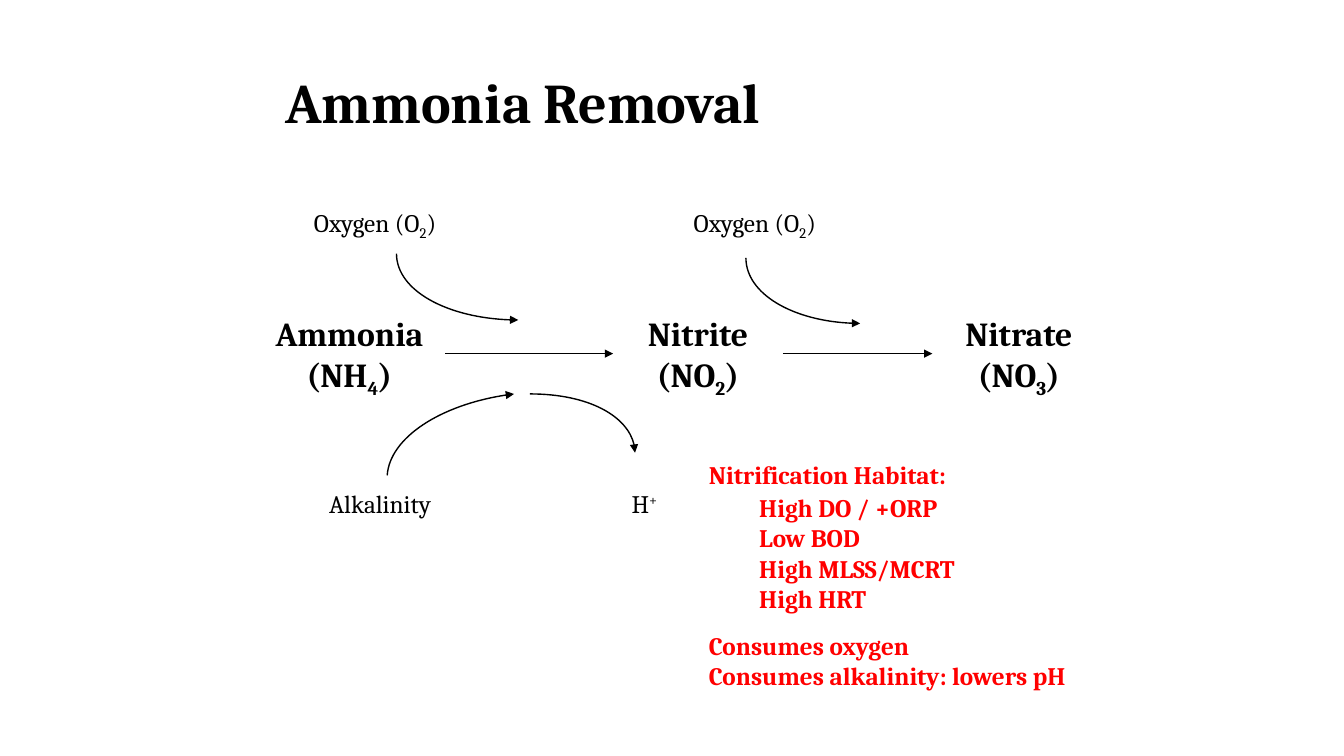
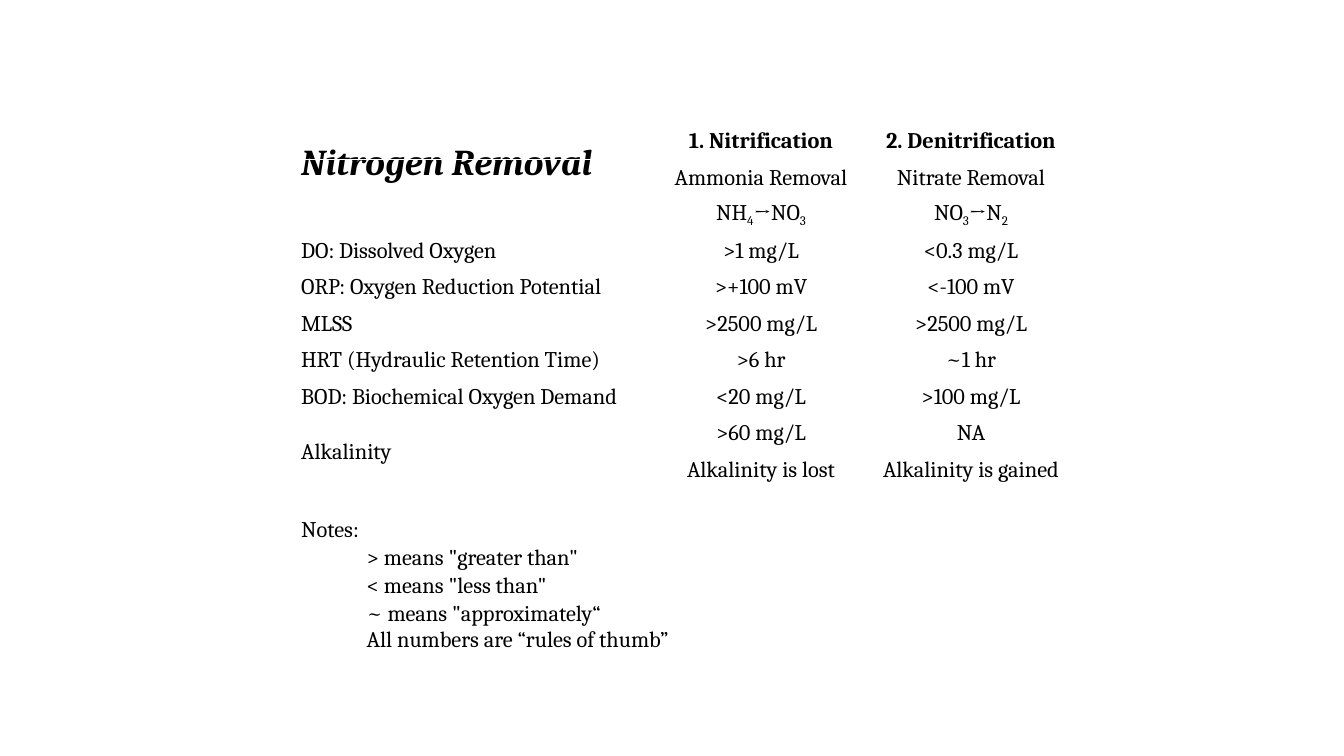
from dataclasses import dataclass, replace

from lxml import etree
from pptx import Presentation
from pptx.dml.color import RGBColor
from pptx.enum.shapes import MSO_CONNECTOR
from pptx.enum.text import MSO_ANCHOR, PP_ALIGN
from pptx.oxml.ns import qn
from pptx.util import Emu, Inches, Pt

STRAIGHT = MSO_CONNECTOR.STRAIGHT
TOP, MIDDLE = MSO_ANCHOR.TOP, MSO_ANCHOR.MIDDLE
LEFT, CENTER = PP_ALIGN.LEFT, PP_ALIGN.CENTER

HUES = {"ink": "000000", "alert": "FF0000", "edge": "FFFFFF"}
FONT = "Cambria"
COLS, ROWS = 160, 90
CELL = Inches(1) // 12
LEFT_SIDE, RIGHT_SIDE = 1, 3


@dataclass(frozen=True)
class Style:
    size: float
    bold: bool = False
    slant: bool = False
    hue: str = "ink"
    align: int = LEFT
    shift: int = -25


@dataclass(frozen=True)
class Line:
    text: str
    indent: float = 0
    before: float = 0
    after: float = 0


@dataclass(frozen=True)
class Label:
    left: float
    top: float
    width: float
    height: float
    lines: tuple[Line, ...]
    style: Style
    anchor: int = TOP


TITLE = Style(40, bold=True)
STAGE = Style(24, bold=True, align=CENTER)
NOTE = Style(18)
ION = replace(NOTE, shift=30)
ALERT = Style(18, bold=True, hue="alert")
HEADING = Style(26, bold=True, slant=True, align=CENTER)
ITEM = Style(16)
VALUE = replace(ITEM, align=CENTER)
HEAD = replace(VALUE, bold=True)

STAGES = [
    Label(30.2, 36.7, 22.8, 10.8, (Line("Ammonia (NH|4|)"),), STAGE),
    Label(73, 36.7, 20.2, 10.8, (Line("Nitrite (NO|2|)"),), STAGE),
    Label(111, 36.7, 20.6, 10.8, (Line("Nitrate (NO|3|)"),), STAGE),
]
HABITAT = (
    Line("Nitrification Habitat:", after=2),
    Line("High DO / +ORP", 6),
    Line("Low BOD", 6),
    Line("High MLSS/MCRT", 6),
    Line("High HRT", 6),
    Line("Consumes oxygen", before=12),
    Line("Consumes alkalinity: lowers pH"),
)
LABELS = [
    Label(32.8, 7, 104, 10, (Line("Ammonia Removal"),), TITLE, MIDDLE),
    Label(36.2, 24.1, 18, 4.7, (Line("Oxygen (O|2|)"),), NOTE),
    Label(81.4, 24.1, 19.6, 4.7, (Line("Oxygen (O|2|)"),), NOTE),
    Label(38, 57.5, 16.4, 4.7, (Line("Alkalinity"),), NOTE),
    Label(74, 57.5, 11.2, 4.7, (Line("H|+"),), ION),
    Label(83.2, 54.1, 56.9, 32.2, HABITAT, ALERT),
]
CURVES = [
    [(47.2, 30.2), (47.2, 34.6), (53.7, 38.1), (61.7, 38.1)],
    [(88.8, 30.7), (88.8, 35), (94.9, 38.5), (102.4, 38.5)],
    [(46.1, 56.6), (46.4, 52.1), (52.9, 47.9), (61.2, 46.9)],
    [(63.1, 46.9), (70.1, 46.9), (75.6, 50), (75.6, 53.9)],
]

WIDTHS = [43.2, 25, 25]
HEIGHTS = [4.35] * 10 + [3.2] * 4 + [6.4]
GRID = [
    ("", "1. Nitrification", "2. Denitrification"),
    ("", "Ammonia Removal", "Nitrate Removal"),
    ("", "NH|4|→NO|3", "NO|3|→N|2"),
    ("DO: Dissolved Oxygen", ">1 mg/L", "<0.3 mg/L"),
    ("ORP: Oxygen Reduction Potential", ">+100 mV", "<-100 mV"),
    ("MLSS", ">2500 mg/L", ">2500 mg/L"),
    ("HRT (Hydraulic Retention Time)", ">6 hr", "~1 hr"),
    ("BOD: Biochemical Oxygen Demand", "<20 mg/L", ">100 mg/L"),
    ("Alkalinity", ">60 mg/L", "NA"),
    ("", "Alkalinity is lost", "Alkalinity is gained"),
    ("", "", ""),
    ("Notes:", "", ""),
    ('> means "greater than"', "", ""),
    ('< means "less than"', "", ""),
    ('~ means "approximately“\nAll numbers are “rules of thumb”', "", ""),
]
SPANS = [((8, 0), (9, 0)), ((11, 0), (11, 1)), ((14, 0), (14, 1))]
FIRST_HINT = 12


def span(cells: float) -> Emu:
    return Emu(round(cells * CELL))


def tint(hue: str) -> RGBColor:
    return RGBColor.from_string(HUES[hue])


def write(frame, lines: tuple[Line, ...], style: Style) -> None:
    for row, line in enumerate(lines):
        para = frame.add_paragraph() if row else frame.paragraphs[0]
        para.alignment = style.align
        para.space_before, para.space_after = Pt(line.before), Pt(line.after)
        para._p.get_or_add_pPr().set("marL", str(span(line.indent)))
        for turn, text in enumerate(line.text.split("|")):
            if not text:
                continue
            run = para.add_run()
            run.text = text
            font = run.font
            font.name, font.size = FONT, Pt(style.size)
            font.bold, font.italic = style.bold, style.slant
            font.color.rgb = tint(style.hue)
            if turn % 2:
                run._r.get_or_add_rPr().set("baseline", str(style.shift * 1000))
        end = etree.SubElement(para._p, qn("a:endParaRPr"))
        end.set("sz", str(style.size * 100))


def add_label(slide, label: Label):
    box = slide.shapes.add_textbox(
        span(label.left), span(label.top), span(label.width), span(label.height))
    frame = box.text_frame
    frame.word_wrap = True
    frame.vertical_anchor = label.anchor
    write(frame, label.lines, label.style)
    return box


def add_tip(line) -> None:
    line.color.rgb = tint("ink")
    line.width = Pt(1)
    etree.SubElement(line._get_or_add_ln(), qn("a:tailEnd")).set("type", "triangle")


def add_arrow(slide, start, end) -> None:
    arrow = slide.shapes.add_connector(STRAIGHT, 0, 0, 0, 0)
    arrow.begin_connect(start, RIGHT_SIDE)
    arrow.end_connect(end, LEFT_SIDE)
    add_tip(arrow.line)
    etree.SubElement(arrow._element.spPr, qn("a:effectLst"))


def add_curve(slide, points: list[tuple[float, float]]) -> None:
    first, *rest = [(span(x), span(y)) for x, y in points]
    pen = slide.shapes.build_freeform(*first)
    pen.add_line_segments(rest, close=False)
    curve = pen.convert_to_shape()
    trace = next(curve._element.iter(qn("a:path")))
    bend = etree.SubElement(trace, qn("a:cubicBezTo"))
    for leg in trace.findall(qn("a:lnTo")):
        bend.append(leg[0])
        trace.remove(leg)
    curve.fill.background()
    curve.shadow.inherit = False
    add_tip(curve.line)


def add_edges(cell) -> None:
    props = cell._tc.get_or_add_tcPr()
    for side in "LRTB":
        edge = etree.SubElement(props, qn(f"a:ln{side}"), w=str(Pt(0.5)))
        fill = etree.SubElement(edge, qn("a:solidFill"))
        etree.SubElement(fill, qn("a:srgbClr"), val=HUES["edge"])


def add_grid(slide) -> None:
    table = slide.shapes.add_table(
        len(GRID), len(WIDTHS), span(34.9), span(14.6),
        span(sum(WIDTHS)), span(sum(HEIGHTS))).table
    table.first_row = table.horz_banding = False
    for col, width in zip(table.columns, WIDTHS):
        col.width = span(width)
    for row, height in zip(table.rows, HEIGHTS):
        row.height = span(height)
    for r, texts in enumerate(GRID):
        for c, text in enumerate(texts):
            cell = table.cell(r, c)
            pad = 0.12 if c else 8.76 if r >= FIRST_HINT else 0.96
            cell.margin_left, cell.margin_right = span(pad), span(0.12)
            cell.margin_top, cell.margin_bottom = span(0.12), 0
            cell.vertical_anchor = MIDDLE
            add_edges(cell)
            cell.fill.background()
            style = ITEM if c == 0 else VALUE if r else HEAD
            write(cell.text_frame, tuple(map(Line, text.split("\n"))), style)
    for start, end in SPANS:
        table.cell(*start).merge(table.cell(*end))


def main() -> None:
    deck = Presentation()
    deck.slide_width, deck.slide_height = span(COLS), span(ROWS)
    blank = deck.slide_layouts[6]

    slide = deck.slides.add_slide(blank)
    for label in LABELS:
        add_label(slide, label)
    boxes = [add_label(slide, stage) for stage in STAGES]
    for start, end in zip(boxes, boxes[1:]):
        add_arrow(slide, start, end)
    for curve in CURVES:
        add_curve(slide, curve)

    slide = deck.slides.add_slide(blank)
    add_label(slide, Label(17, 16, 72.4, 10, (Line("Nitrogen Removal"),), HEADING))
    add_grid(slide)

    deck.save("out.pptx")


if __name__ == "__main__":
    main()
